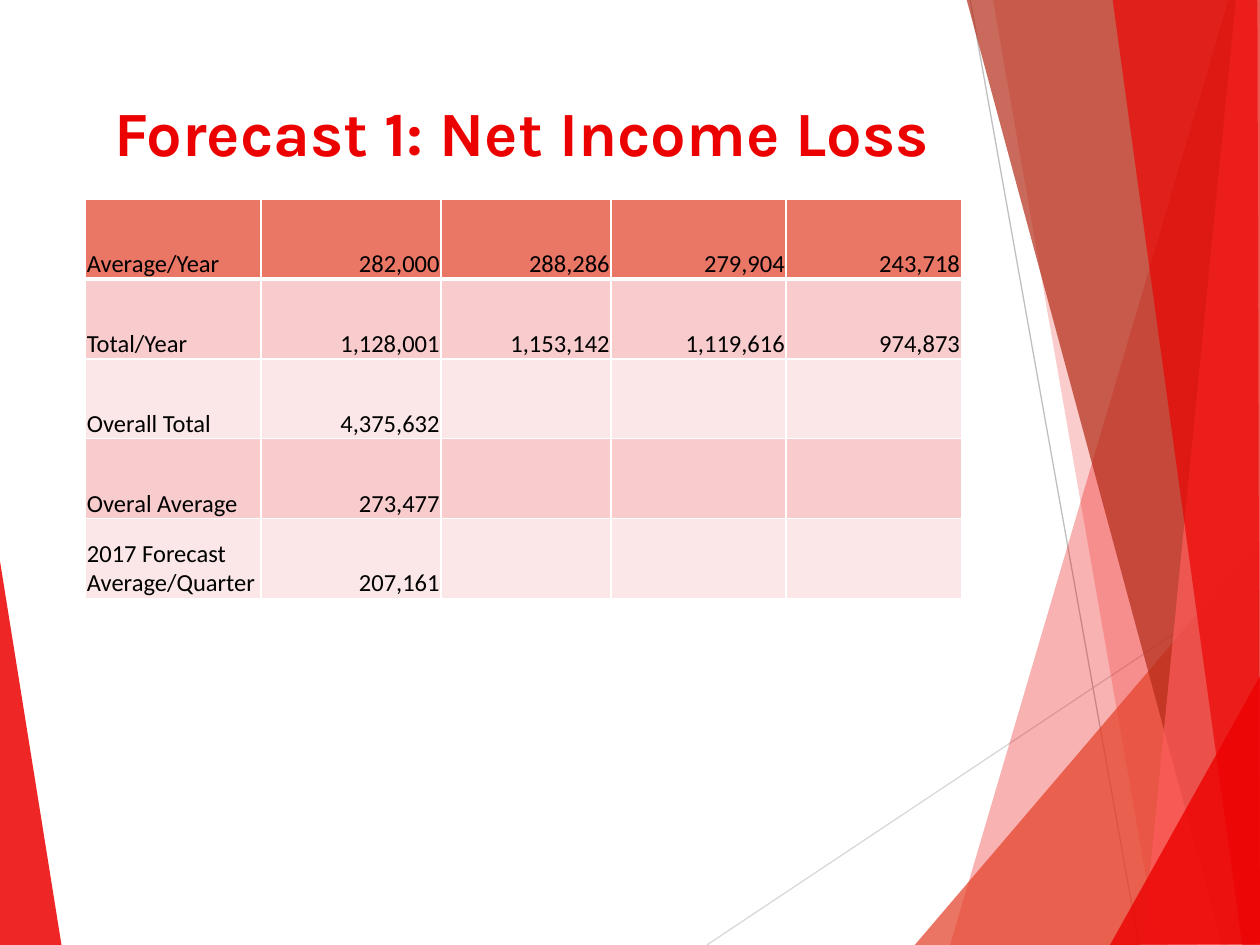
import pptx
import pptx.dml.color
import pptx.enum.shapes
import pptx.enum.text
import pptx.oxml
import pptx.oxml.ns
import pptx.util
from lxml import etree

Inches = pptx.util.Inches
Pt = pptx.util.Pt
RGBColor = pptx.dml.color.RGBColor
PP_ALIGN = pptx.enum.text.PP_ALIGN
MSO_ANCHOR = pptx.enum.text.MSO_ANCHOR
qn = pptx.oxml.ns.qn

RED = RGBColor(0xEC, 0x01, 0x01)
ORANGE = RGBColor(0xE4, 0x41, 0x29)
BRICK = RGBColor(0xB3, 0x2B, 0x17)
CORAL = RGBColor(0xFE, 0x5C, 0x5C)
LIGHT_GREY = RGBColor(0xD9, 0xD9, 0xD9)
GREY = RGBColor(0xBF, 0xBF, 0xBF)
HEADER = RGBColor(0xEA, 0x76, 0x66)
BAND_DARK = RGBColor(0xF8, 0xCC, 0xCC)
BAND_LIGHT = RGBColor(0xFB, 0xE7, 0xE7)
BLACK = RGBColor(0, 0, 0)
WHITE = RGBColor(0xFF, 0xFF, 0xFF)

LINES = [
    ((5.61, 7.5), (10.01, 4.57), LIGHT_GREY),
    ((7.7, 0), (9.04, 7.5), GREY),
]
LEFT_FACET = ([(-0.01, 4.39), (0.49, 7.51), (-0.01, 7.5)], RED, 85)
RIGHT_FACETS = [
    ([(9.75, 0), (7.54, 7.5), (10.02, 7.51), (10.01, 0.01)], RED, 30),
    ([(7.88, -0.01), (9.19, 7.5), (10.01, 7.5), (10.01, -0.01)], RED, 20),
    ([(7.26, 7.5), (10, 4.29), (10.01, 7.5)], ORANGE, 72),
    ([(7.67, -0.01), (9.7, 7.5), (10.01, 7.49), (10.01, -0.01)], BRICK, 70),
    ([(9.81, -0.01), (9.07, 7.5), (10.01, 7.5), (10, -0.01)], CORAL, 70),
    ([(8.83, -0.01), (9.86, 7.5), (10, 7.5), (9.98, -0.01)], RED, 65),
    ([(8.81, 7.5), (10.01, 5.35), (10.01, 7.49)], RED, 80),
]
ROWS = [
    ["Average/Year", "282,000", "288,286", "279,904", "243,718"],
    ["Total/Year", "1,128,001", "1,153,142", "1,119,616", "974,873"],
    ["Overall Total", "4,375,632", "", "", ""],
    ["Overal Average", "273,477", "", "", ""],
    ["2017 Forecast Average/Quarter", "207,161", "", "", ""],
]
COLUMN_WIDTHS = [1.39, 1.43, 1.35, 1.39, 1.39]


class ForecastSlide:
    title_font = "Karla"
    body_font = "Calibri"

    def __init__(self, prs):
        self.s = prs.slides.add_slide(prs.slide_layouts[5])

    def facet(self, points, color, opacity):
        corners = [(Inches(x), Inches(y)) for x, y in points]
        builder = self.s.shapes.build_freeform(*corners[0], scale=1.0)
        builder.add_line_segments(corners[1:], close=True)
        sp = builder.convert_to_shape()
        sp.shadow.inherit = False
        sp.line.fill.background()
        sp.fill.solid()
        sp.fill.fore_color.rgb = color
        clr = sp.element.spPr.find(qn("a:solidFill")).find(qn("a:srgbClr"))
        etree.SubElement(clr, qn("a:alpha")).set("val", str(opacity * 1000))

    def line(self, start, end, color):
        sp = self.s.shapes.add_connector(
            pptx.enum.shapes.MSO_CONNECTOR.STRAIGHT,
            *[Inches(v) for v in start + end])
        sp.line.color.rgb = color
        sp.line.width = Pt(0.75)
        etree.SubElement(sp.element.spPr, qn("a:effectLst"))

    def run(self, p, text, font, size, color, bold=False):
        r = p.add_run()
        r.text = text
        r.font.name = font
        r.font.size = Pt(size)
        r.font.bold = bold
        r.font.color.rgb = color

    def title(self, text, left, top, width, height):
        sp = self.s.shapes.title
        sp.left, sp.top = Inches(left), Inches(top)
        sp.width, sp.height = Inches(width), Inches(height)
        sp.element.getparent().append(sp.element)
        tf = sp.text_frame
        tf.word_wrap = True
        tf.vertical_anchor = MSO_ANCHOR.MIDDLE
        p = tf.paragraphs[0]
        p.alignment = PP_ALIGN.CENTER
        self.run(p, text, self.title_font, 36, RED, bold=True)

    def borders(self, cell, bottom_width):
        tc_pr = cell._tc.get_or_add_tcPr()
        widths = {"a:lnL": 1, "a:lnR": 1, "a:lnT": 1, "a:lnB": bottom_width}
        for i, (tag, width) in enumerate(widths.items()):
            ln = etree.Element(qn(tag), w=str(Pt(width)))
            fill = etree.SubElement(ln, qn("a:solidFill"))
            etree.SubElement(fill, qn("a:srgbClr")).set("val", str(WHITE))
            tc_pr.insert(i, ln)

    def cell(self, cell, text, fill, align, bottom_width):
        cell.fill.solid()
        cell.fill.fore_color.rgb = fill
        self.borders(cell, bottom_width)
        if text:
            cell.vertical_anchor = MSO_ANCHOR.BOTTOM
            cell.margin_left = cell.margin_right = cell.margin_top = Inches(0.01)
            cell.margin_bottom = 0
            p = cell.text_frame.paragraphs[0]
            p.alignment = align
            self.run(p, text, self.body_font, 14, BLACK)

    def table(self, rows, widths, left, top, height):
        frame = self.s.shapes.add_table(
            len(rows), len(widths), Inches(left), Inches(top),
            Inches(sum(widths)), Inches(height))
        table = frame.table
        for column, width in zip(table.columns, widths):
            column.width = Inches(width)
        for i, row in enumerate(rows):
            fill = HEADER if i == 0 else BAND_DARK if i % 2 else BAND_LIGHT
            for j, text in enumerate(row):
                align = PP_ALIGN.RIGHT if j else PP_ALIGN.LEFT
                self.cell(table.cell(i, j), text, fill, align, 1 if i else 3)
                if i == 1:
                    top_line = table.cell(i, j)._tc.tcPr.find(qn("a:lnT"))
                    top_line.set("w", str(Pt(3)))


def main():
    prs = pptx.Presentation()
    prs.slide_width, prs.slide_height = Inches(10), Inches(7.5)
    slide = ForecastSlide(prs)
    slide.facet(*LEFT_FACET)
    for line in LINES:
        slide.line(*line)
    for facet in RIGHT_FACETS:
        slide.facet(*facet)
    slide.title("Forecast 1: Net Income Loss", 0.67, 0.67, 6.94, 0.75)
    slide.table(ROWS, COLUMN_WIDTHS, 0.68, 1.58, 3.17)
    prs.save("out.pptx")


if __name__ == "__main__":
    main()
